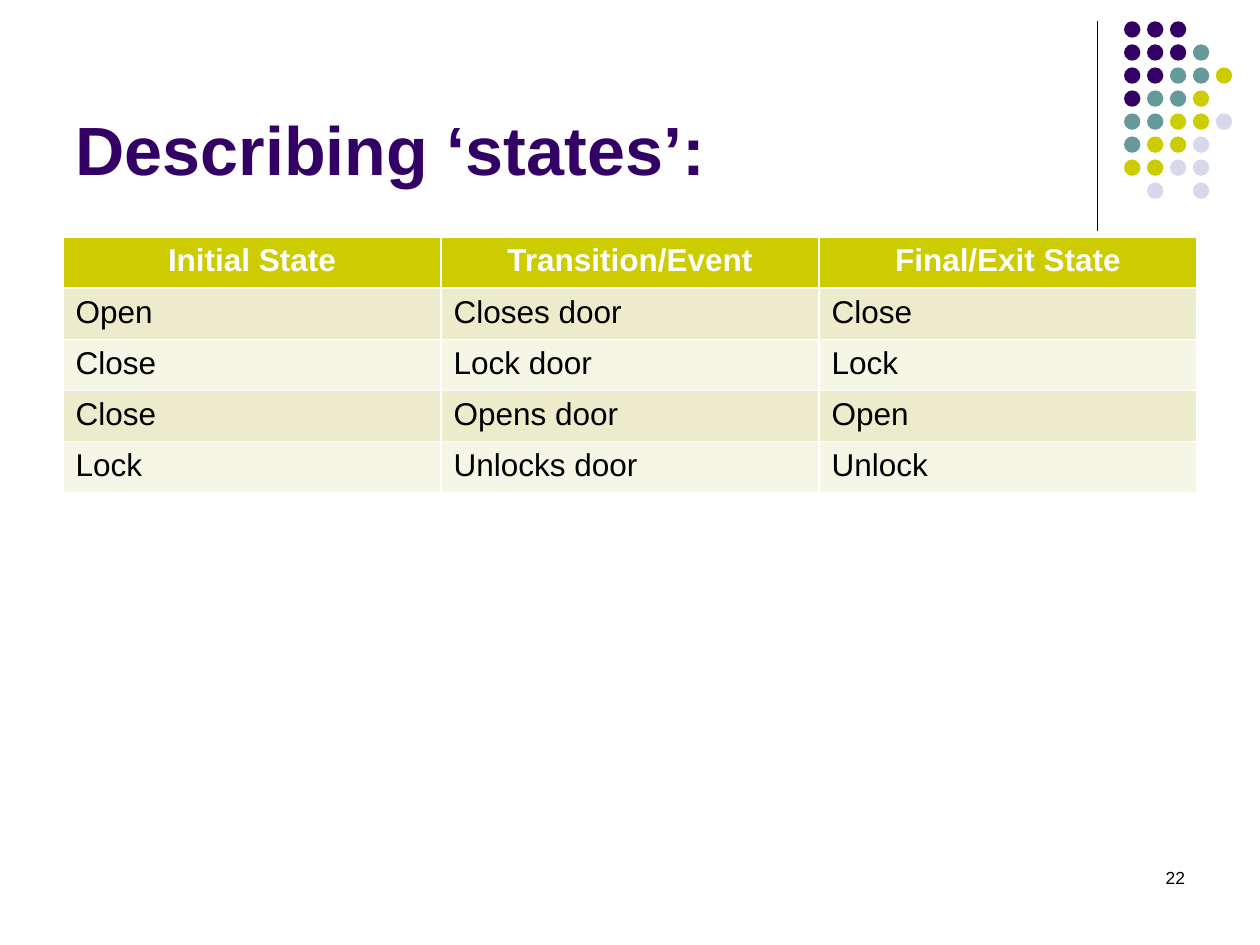
from collections import namedtuple
from dataclasses import dataclass

from lxml import etree
from pptx import Presentation
from pptx.dml.color import RGBColor
from pptx.enum import shapes, text
from pptx.oxml import ns
from pptx.util import Cm, Pt

Box = namedtuple("Box", "left top width height")


@dataclass(frozen=True)
class Theme:
    """Colours, font and type sizes of the deck."""
    font: str = "Arial"
    purple: str = "330066"
    teal: str = "669999"
    lime: str = "CCCC00"
    lavender: str = "D8D8EC"
    band_dark: str = "ECECCC"
    band_light: str = "F6F6E7"
    black: str = "000000"
    white: str = "FFFFFF"
    title_size: int = 39
    table_size: int = 18
    number_size: int = 10


THEME = Theme()
DOT_COLOURS = {"P": THEME.purple, "T": THEME.teal, "L": THEME.lime, "V": THEME.lavender}
DOT_ROWS = ["PPP", "PPPT", "PPTTL", "PTTL", "TTLLV", "TLLV", "LLVV", " V V"]
DOT_SIZE = 0.33
STATES = [
    ("Initial State", "Transition/Event", "Final/Exit State"),
    ("Open", "Closes door", "Close"),
    ("Close", "Lock door", "Lock"),
    ("Close", "Opens door", "Open"),
    ("Lock", "Unlocks door", "Unlock"),
]


def lengths(box):
    """Convert a box in centimetres to slide lengths."""
    return [Cm(value) for value in box]


def style_paragraph(paragraph, size, colour, bold=False, alignment=text.PP_ALIGN.LEFT):
    """Set the font and alignment of a paragraph."""
    paragraph.alignment = alignment
    font = paragraph.font
    font.name, font.size, font.bold = THEME.font, Pt(size), bold
    font.color.rgb = RGBColor.from_string(colour)


def add_rule(slide, box):
    """Draw the vertical rule along the left side of the box."""
    left, top, _, height = lengths(box)
    rule = slide.shapes.add_connector(
        shapes.MSO_CONNECTOR.STRAIGHT, left, top, left, top + height)
    rule.line.color.rgb = RGBColor.from_string(THEME.black)
    rule.line.width = Pt(0.75)
    etree.SubElement(rule._element.spPr, ns.qn("a:effectLst"))


def add_dots(slide, box):
    """Fill the box with the grouped grid of coloured dots."""
    group = slide.shapes.add_group_shape()
    column_step = (box.width - DOT_SIZE) / (max(map(len, DOT_ROWS)) - 1)
    row_step = (box.height - DOT_SIZE) / (len(DOT_ROWS) - 1)
    for row, codes in enumerate(DOT_ROWS):
        for column, code in enumerate(codes):
            if code not in DOT_COLOURS:
                continue
            place = Box(box.left + column * column_step, box.top + row * row_step,
                        DOT_SIZE, DOT_SIZE)
            dot = group.shapes.add_shape(shapes.MSO_SHAPE.OVAL, *lengths(place))
            dot.shadow.inherit = False
            dot.fill.solid()
            dot.fill.fore_color.rgb = RGBColor.from_string(DOT_COLOURS[code])
            dot.line.fill.background()


def place_title(slide, box, wording):
    """Move the title placeholder to the box and fill it."""
    title = slide.shapes.title
    title.left, title.top, title.width, title.height = lengths(box)
    frame = title.text_frame
    frame.text = wording
    frame.auto_size = text.MSO_AUTO_SIZE.NONE
    frame.vertical_anchor = text.MSO_ANCHOR.BOTTOM
    style_paragraph(frame.paragraphs[0], THEME.title_size, THEME.purple, bold=True)


def add_state_table(slide, box, rows):
    """Add the banded table of states with its header row."""
    table = slide.shapes.add_table(len(rows), len(rows[0]), *lengths(box)).table
    for row, values in enumerate(rows):
        header = row == 0
        band = THEME.band_dark if row % 2 else THEME.band_light
        for column, value in enumerate(values):
            cell = table.cell(row, column)
            cell.text = value
            cell.fill.solid()
            cell.fill.fore_color.rgb = RGBColor.from_string(THEME.lime if header else band)
            style_paragraph(
                cell.text_frame.paragraphs[0], THEME.table_size,
                THEME.white if header else THEME.black, header,
                text.PP_ALIGN.CENTER if header else text.PP_ALIGN.LEFT)


def add_slide_number(slide, box, number):
    """Write the slide number at the right of the box."""
    frame = slide.shapes.add_textbox(*lengths(box)).text_frame
    frame.word_wrap = True
    frame.text = str(number)
    style_paragraph(frame.paragraphs[0], THEME.number_size, THEME.black,
                    alignment=text.PP_ALIGN.RIGHT)


def main():
    """Build and save the presentation."""
    presentation = Presentation()
    presentation.slide_width, presentation.slide_height = Cm(25.4), Cm(19.05)
    slide = presentation.slides.add_slide(presentation.slide_layouts[5])
    add_rule(slide, Box(22.12, 0.43, 0, 4.22))
    add_dots(slide, Box(22.66, 0.43, 2.18, 3.58))
    place_title(slide, Box(1.27, 0.33, 20.96, 3.61), "Describing ‘states’:")
    add_state_table(slide, Box(1.27, 4.78, 22.86, 5.15), STATES)
    add_slide_number(slide, Box(20.96, 17.35, 3.18, 1.27), 22)
    presentation.save("out.pptx")


if __name__ == "__main__":
    main()
